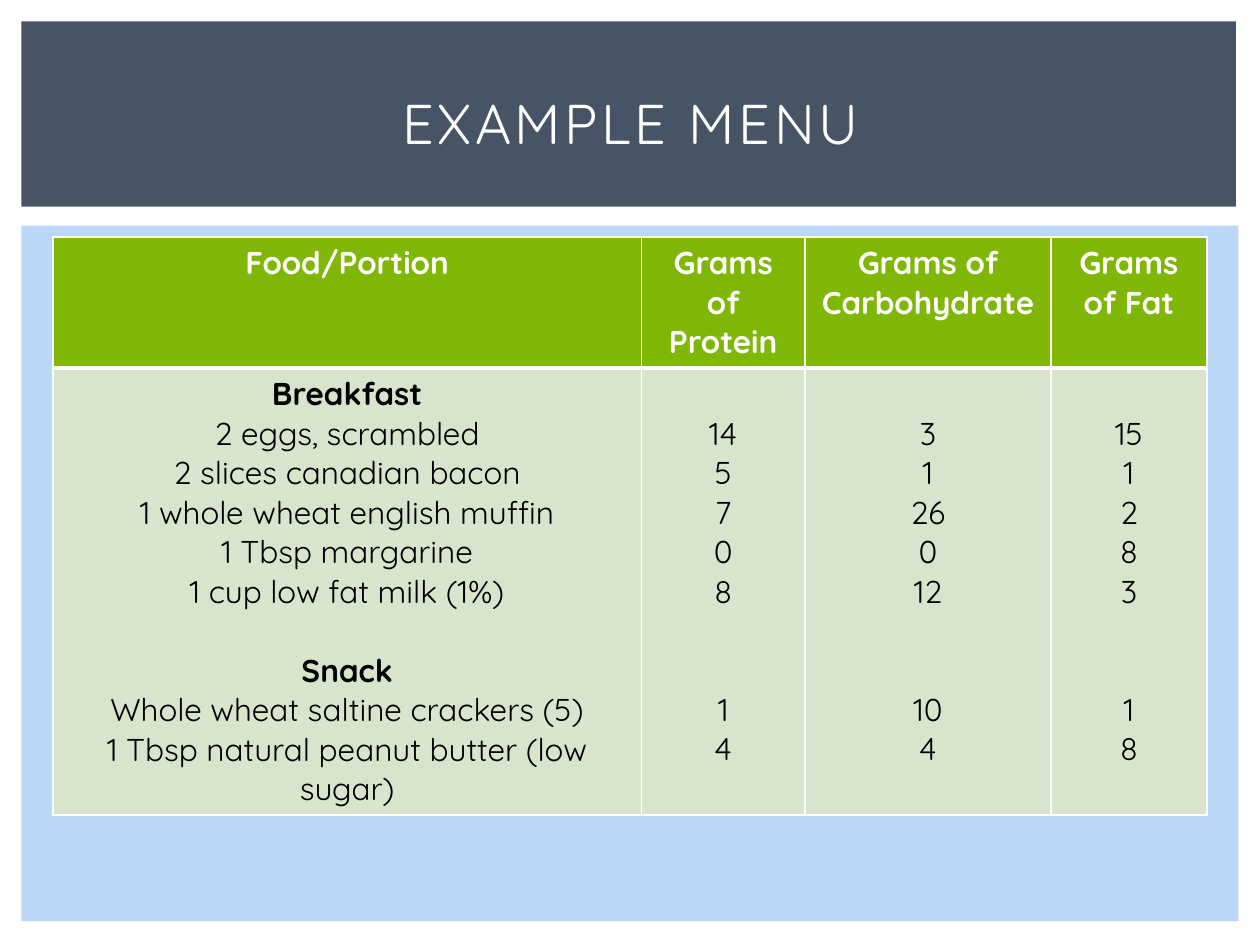
from lxml.etree import SubElement
from pptx import Presentation
from pptx.dml.color import RGBColor
from pptx.enum.shapes import MSO_SHAPE
from pptx.enum.text import MSO_ANCHOR, PP_ALIGN
from pptx.oxml.ns import qn
from pptx.util import Inches, Pt

LINE = 22.5  # height of one 18 pt text line, in points


def rgb(value):
    return RGBColor.from_string(value)


def write(p, text, size=18, color="000000", bold=False, before=0):
    p.alignment = PP_ALIGN.CENTER
    p.space_before = Pt(before)
    r = p.add_run()
    r.text = text
    r.font.name = "Quicksand"
    r.font.size = Pt(size)
    r.font.bold = bold
    r.font.color.rgb = rgb(color)
    return r


prs = Presentation()
prs.slide_width, prs.slide_height = Inches(10), Inches(7.5)
s = prs.slides.add_slide(prs.slide_layouts[5])

# Background panels
for top, width, height, color in [(1.79, 9.66, 5.52, "BBD7F8"),
                                  (0.17, 9.64, 1.47, "465466")]:
    panel = s.shapes.add_shape(MSO_SHAPE.RECTANGLE, Inches(0.17), Inches(top),
                               Inches(width), Inches(height))
    panel.shadow.inherit = False
    panel.fill.solid()
    panel.fill.fore_color.rgb = rgb(color)
    panel.line.fill.background()

# Title, brought in front of the panels
title = s.shapes.title
s.shapes._spTree.append(title._element)
title.left, title.top = Inches(0.42), Inches(0.39)
title.width, title.height = Inches(9.17), Inches(1.15)
title.text_frame.vertical_anchor = MSO_ANCHOR.MIDDLE
r = write(title.text_frame.paragraphs[0], "EXAMPLE MENU", size=32, color="FFFFFF")
r._r.get_or_add_rPr().set("spc", "200")

# Menu table: (heading, breakfast lines, snack lines)
columns = [
    ("Food/Portion", 4.67,
     ["Breakfast", "2 eggs, scrambled", "2 slices canadian bacon",
      "1 whole wheat english muffin", "1 Tbsp margarine", "1 cup low fat milk (1%)"],
     ["Snack", "Whole wheat saltine crackers (5)",
      "1 Tbsp natural peanut butter (low sugar)"]),
    ("Grams of Protein", 1.3, ["14", "5", "7", "0", "8"], ["1", "4"]),
    ("Grams of Carbohydrate", 1.95, ["3", "1", "26", "0", "12"], ["10", "4"]),
    ("Grams of Fat", 1.24, ["15", "1", "2", "8", "3"], ["1", "8"]),
]
table = s.shapes.add_table(2, len(columns), Inches(0.42), Inches(1.88),
                           Inches(9.16), Inches(4.58)).table
table.rows[0].height, table.rows[1].height = Inches(1.04), Inches(3.54)

for i, (heading, width, breakfast, snack) in enumerate(columns):
    table.columns[i].width = Inches(width)
    head, body = table.cell(0, i), table.cell(1, i)
    write(head.text_frame.paragraphs[0], heading, color="FFFFFF", bold=True)

    # Number columns skip the lines that hold the meal names
    skipped = 0 if i == 0 else 1
    body.margin_top = Inches(0.05) + Pt(LINE * skipped)
    tf = body.text_frame
    for n, text in enumerate(breakfast + snack):
        p = tf.add_paragraph() if n else tf.paragraphs[0]
        gap = LINE * (1 + skipped) if n == len(breakfast) else 0
        write(p, text, bold=text in ("Breakfast", "Snack"), before=gap)

    for cell, fill, thick in [(head, "80B606", "lnB"), (body, "D8E5CC", "lnT")]:
        tcPr = cell._tc.get_or_add_tcPr()
        for side in ("lnL", "lnR", "lnT", "lnB"):
            ln = SubElement(tcPr, qn(f"a:{side}"), w=str(Pt(3 if side == thick else 1)))
            SubElement(SubElement(ln, qn("a:solidFill")), qn("a:srgbClr"), val="FFFFFF")
        cell.fill.solid()
        cell.fill.fore_color.rgb = rgb(fill)

prs.save("out.pptx")
